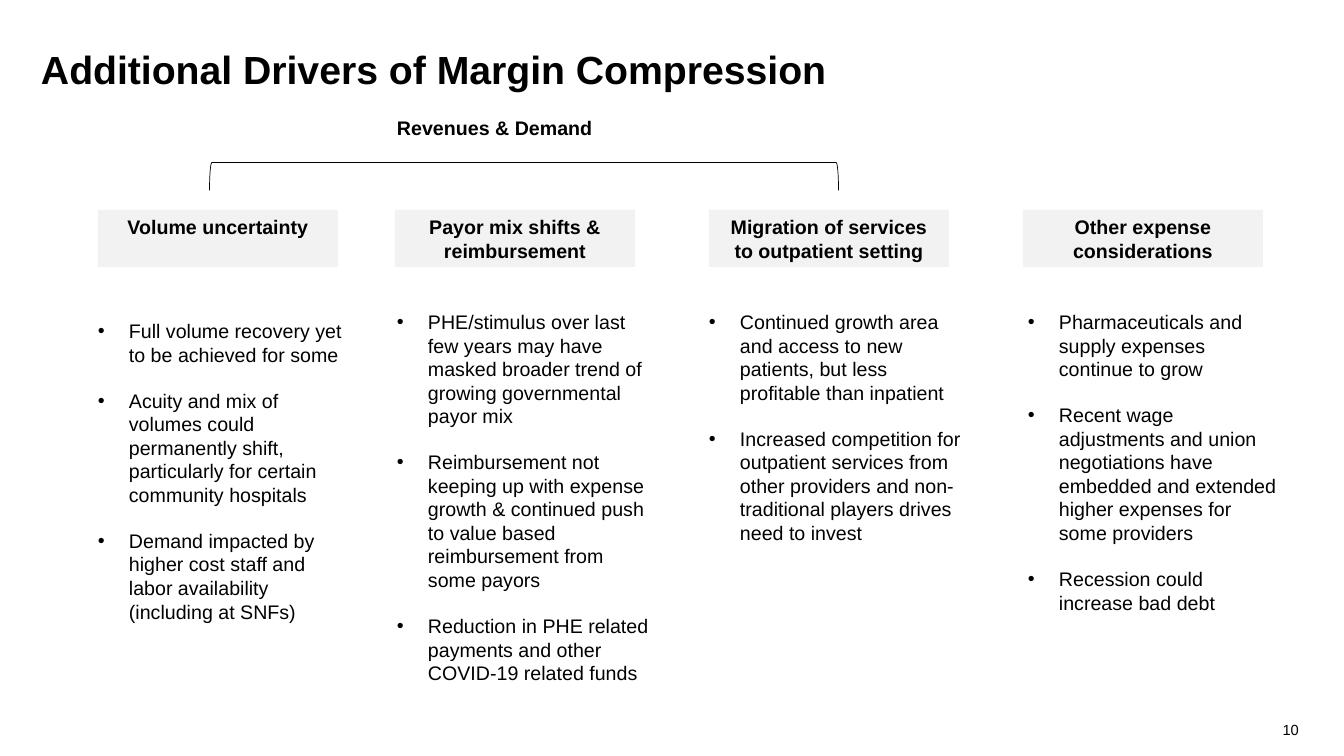
"""Build the slide on additional drivers of margin compression."""
from dataclasses import dataclass

from lxml import etree
from pptx import Presentation
from pptx import util as u
from pptx.dml.color import RGBColor
from pptx.enum import shapes, text
from pptx.oxml.ns import qn


@dataclass(frozen=True)
class Theme:
    font: str = "Arial"
    ink: RGBColor = RGBColor(0x00, 0x00, 0x00)
    panel: RGBColor = RGBColor(0xF2, 0xF2, 0xF2)
    title: float = 28
    body: float = 14
    page: float = 10.5
    gap: float = 16.1


theme = Theme()
PX = 914400 / 100.8
HEADER_TOP, HEADER_WIDTH, HEADER_HEIGHT = 210, 240, 57
LIST_WIDTH, BULLET_INDENT = 254, 31


def box(*lengths):
    """Turn px lengths into EMU."""
    return [u.Emu(round(length * PX)) for length in lengths]


def write(shape, lines, size, bold=False, align=text.PP_ALIGN.LEFT,
          anchor=text.MSO_ANCHOR.TOP, insets=(0, 0, 0, 0), wrap=True, bullets=False):
    """Fill a shape with formatted paragraphs."""
    frame = shape.text_frame
    frame.text = "\n".join(lines)
    frame.auto_size = text.MSO_AUTO_SIZE.NONE
    frame.word_wrap = wrap
    frame.vertical_anchor = anchor
    (frame.margin_left, frame.margin_top,
     frame.margin_right, frame.margin_bottom) = box(*insets)
    for index, paragraph in enumerate(frame.paragraphs):
        paragraph.alignment = align
        if bullets:
            properties = paragraph._p.get_or_add_pPr()
            indent, = box(BULLET_INDENT)
            properties.set("marL", str(indent))
            properties.set("indent", str(-indent))
            etree.SubElement(properties, qn("a:buFont"), typeface=theme.font)
            etree.SubElement(properties, qn("a:buChar"), char="•")
            if index:
                paragraph.space_before = u.Pt(theme.gap)
        for run in paragraph.runs:
            run.font.name = theme.font
            run.font.size = u.Pt(size)
            run.font.bold = bold
            run.font.color.rgb = theme.ink


presentation = Presentation()
presentation.slide_width, presentation.slide_height = box(1344, 756)
slide = presentation.slides.add_slide(presentation.slide_layouts[5])

title = slide.shapes.title
title.left, title.top, title.width, title.height = box(41, 25, 1252, 96)
write(title, ["Additional Drivers of Margin Compression"], theme.title, bold=True,
      anchor=text.MSO_ANCHOR.MIDDLE, insets=(0, 5, 10, 5))
title.text_frame.paragraphs[0].line_spacing = 0.85

group_label = slide.shapes.add_textbox(*box(397, 116, 197, 24))
write(group_label, ["Revenues & Demand"], theme.body, bold=True, wrap=False)

bracket = slide.shapes.add_shape(shapes.MSO_SHAPE.LEFT_BRACKET, *box(510, -138, 28, 629))
bracket.rotation = 90
bracket.shadow.inherit = False
bracket.fill.background()
bracket.line.color.rgb = theme.ink
bracket.line.width = u.Pt(0.5)

drivers = [
    ("Volume uncertainty", 98, (98, 319, 308), [
        "Full volume recovery yet to be achieved for some",
        "Acuity and mix of volumes could permanently shift, particularly for certain "
        "community hospitals",
        "Demand impacted by higher cost staff and labor availability (including at SNFs)",
    ]),
    ("Payor mix shifts & reimbursement", 395, (397, 310, 427), [
        "PHE/stimulus over last few years may have masked broader trend of growing "
        "governmental payor mix",
        "Reimbursement not keeping up with expense growth & continued push to value "
        "based reimbursement from some payors",
        "Reduction in PHE related payments and other COVID-19 related funds",
    ]),
    ("Migration of services to outpatient setting", 709, (709, 310, 261), [
        "Continued growth area and access to new patients, but less profitable than "
        "inpatient",
        "Increased competition for outpatient services from other providers and "
        "non-traditional players drives need to invest",
    ]),
    ("Other expense considerations", 1023, (1028, 310, 333), [
        "Pharmaceuticals and supply expenses continue to grow",
        "Recent wage adjustments and union negotiations have embedded and extended "
        "higher expenses for some providers",
        "Recession could increase bad debt",
    ]),
]
for heading, header_left, (list_left, list_top, list_height), points in drivers:
    header = slide.shapes.add_shape(
        shapes.MSO_SHAPE.RECTANGLE,
        *box(header_left, HEADER_TOP, HEADER_WIDTH, HEADER_HEIGHT))
    header.shadow.inherit = False
    header.fill.solid()
    header.fill.fore_color.rgb = theme.panel
    header.line.fill.background()
    write(header, [heading], theme.body, bold=True, align=text.PP_ALIGN.CENTER,
          insets=(10, 5, 10, 5))

    point_list = slide.shapes.add_textbox(*box(list_left, list_top, LIST_WIDTH, list_height))
    write(point_list, points, theme.body, bullets=True)

page_number = slide.shapes.add_textbox(*box(1237, 697, 62, 41))
write(page_number, ["10"], theme.page, align=text.PP_ALIGN.RIGHT,
      anchor=text.MSO_ANCHOR.BOTTOM, insets=(10, 0, 0, 0))

presentation.save("out.pptx")
